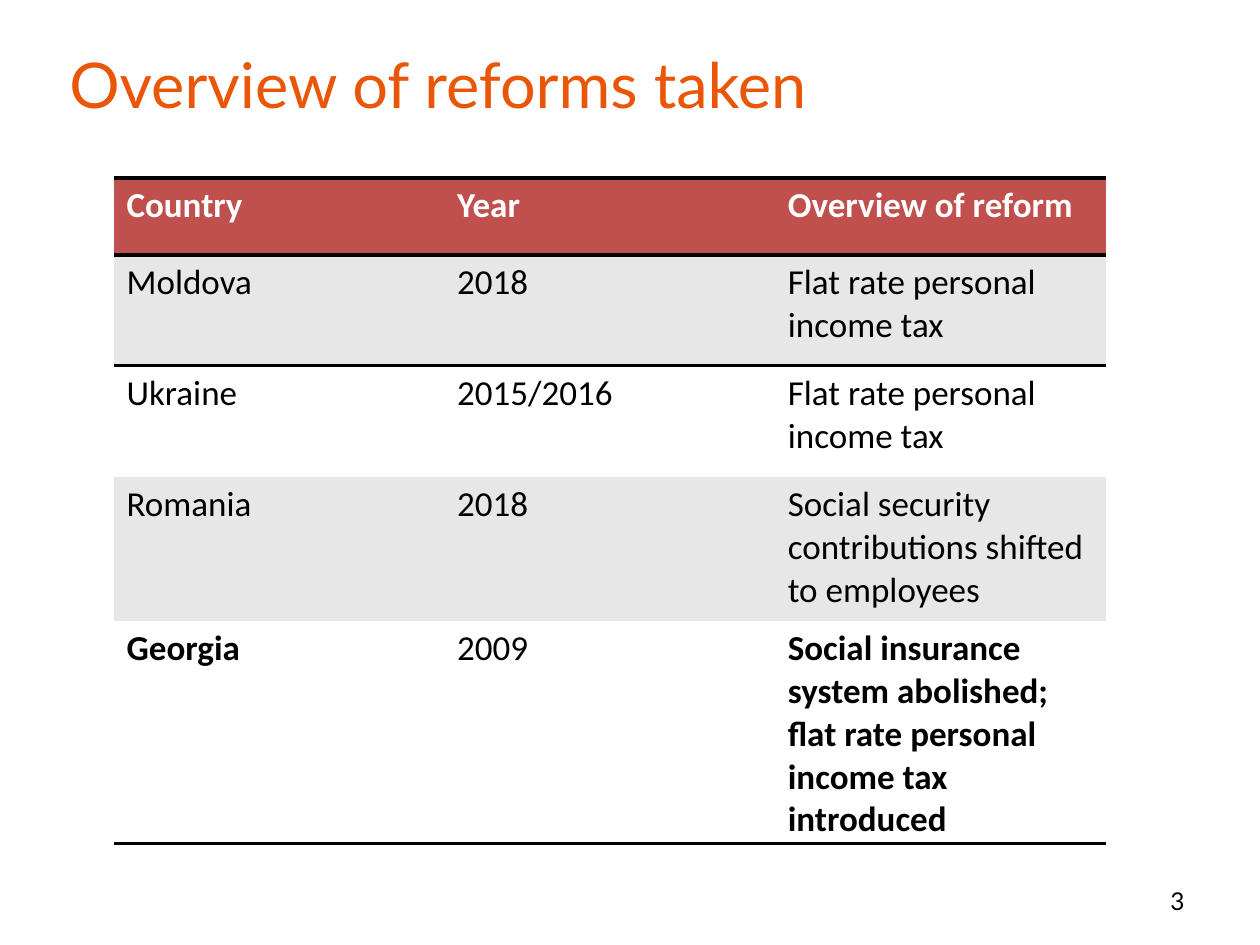
from lxml.etree import SubElement
from pptx import Presentation
from pptx.dml.color import RGBColor
from pptx.enum.text import MSO_ANCHOR, PP_ALIGN
from pptx.oxml.ns import qn
from pptx.util import Emu, Pt

PX = 914400 / 126

ORANGE = RGBColor(0xEA, 0x56, 0x08)
RED = RGBColor(0xC0, 0x50, 0x4D)
GREY = RGBColor(0xE7, 0xE7, 0xE7)
WHITE = RGBColor(0xFF, 0xFF, 0xFF)
BLACK = RGBColor(0x00, 0x00, 0x00)

NO_STYLE_NO_GRID = "{2D5ABB26-0587-4C30-8999-92F81FD0307C}"
COLUMN_WIDTH = 330.67
ROW_HEIGHTS = [77, 111, 111, 144, 212]
REFORMS = [
    ("Country", "Year", "Overview of reform"),
    ("Moldova", "2018", "Flat rate personal income tax"),
    ("Ukraine", "2015/2016", "Flat rate personal income tax"),
    ("Romania", "2018", "Social security contributions shifted to employees"),
    ("Georgia", "2009",
     "Social insurance system abolished; flat rate personal income tax introduced"),
]
LAST_ROW = len(REFORMS) - 1
BOLD_CELLS = {(0, 0), (0, 1), (0, 2), (LAST_ROW, 0), (LAST_ROW, 2)}


def px(length):
    return Emu(round(length * PX))


def write_text(text_frame, text, color, **formats):
    paragraph = text_frame.paragraphs[0]
    run = paragraph.add_run()
    run.text = text
    run.font.color.rgb = color
    for name, value in formats.items():
        setattr(run.font, name, value)
    return paragraph


def add_text(slide, box, text, color, size, alignment=PP_ALIGN.LEFT):
    text_frame = slide.shapes.add_textbox(*map(px, box)).text_frame
    text_frame.word_wrap = True
    text_frame.vertical_anchor = MSO_ANCHOR.MIDDLE
    paragraph = write_text(text_frame, text, color, name="Lato", size=Pt(size))
    paragraph.alignment = alignment


def add_border(cell, side):
    properties = cell._tc.get_or_add_tcPr()
    line = SubElement(properties, qn(f"a:{side}"), w=str(Pt(2)))
    fill = SubElement(line, qn("a:solidFill"))
    SubElement(fill, qn("a:srgbClr"), val=str(BLACK))


def format_cell(cell, row, column):
    # Borders come before the fill in the cell properties
    sides = {0: ("lnT", "lnB"), 1: ("lnT",), LAST_ROW: ("lnB",)}
    for side in sides.get(row, ()):
        add_border(cell, side)
    cell.fill.solid()
    cell.fill.fore_color.rgb = RED if row == 0 else GREY if row % 2 else WHITE
    write_text(cell.text_frame, REFORMS[row][column],
               WHITE if row == 0 else BLACK,
               name="Calibri", size=Pt(20), bold=(row, column) in BOLD_CELLS)


def add_reform_table(slide, left, top):
    columns = len(REFORMS[0])
    frame = slide.shapes.add_table(
        len(REFORMS), columns, px(left), px(top),
        px(COLUMN_WIDTH * columns), px(sum(ROW_HEIGHTS)))
    table = frame.table
    table._tbl.tblPr.find(qn("a:tableStyleId")).text = NO_STYLE_NO_GRID
    for column in table.columns:
        column.width = px(COLUMN_WIDTH)
    for row, height in enumerate(ROW_HEIGHTS):
        table.rows[row].height = px(height)
        for column in range(columns):
            format_cell(table.cell(row, column), row, column)


def main():
    presentation = Presentation()
    presentation.slide_width, presentation.slide_height = px(1260), px(945)
    slide = presentation.slides.add_slide(presentation.slide_layouts[6])

    # Title
    add_text(slide, (57, 39, 1134, 89), "Overview of reforms taken", ORANGE, 36)
    # Reforms by country
    add_reform_table(slide, 114, 178)
    # Page number
    add_text(slide, (903, 876, 294, 50), "3", BLACK, 14, PP_ALIGN.RIGHT)

    presentation.save("out.pptx")


if __name__ == "__main__":
    main()
